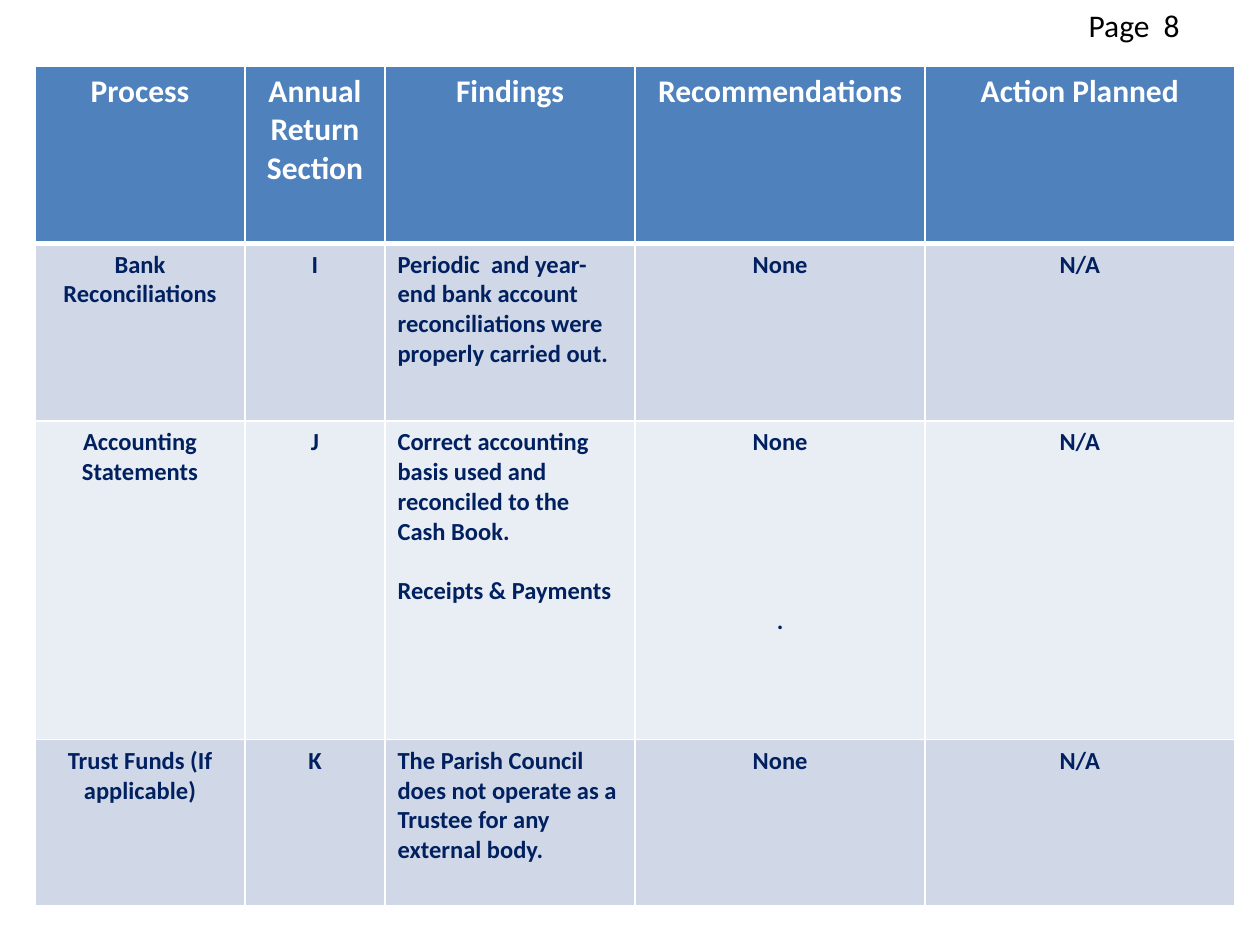
"""Build the audit findings page: a page number above a table of processes."""
from lxml import etree
from pptx import Presentation
from pptx.dml.color import RGBColor
from pptx.enum import text
from pptx.oxml import ns
from pptx.util import Pt

WHITE = RGBColor(0xFF, 0xFF, 0xFF)
BLACK = RGBColor(0x00, 0x00, 0x00)
NAVY = RGBColor(0x00, 0x20, 0x60)
BLUE = RGBColor(0x4F, 0x81, 0xBD)
BAND_DARK = RGBColor(0xD0, 0xD8, 0xE8)
BAND_LIGHT = RGBColor(0xE9, 0xED, 0xF4)

HEADER_FONT = {"name": "Calibri", "size": Pt(18), "bold": True}
BODY_FONT = {"name": "Calibri", "size": Pt(14), "bold": True}
PAGE_FONT = {"name": "Calibri", "size": Pt(18), "bold": False}
LINE_HEIGHT = 17

COLUMN_WIDTHS = [120, 80, 143, 165.7, 176.8]
ROW_HEIGHTS = [101.5, 101.5, 182, 95]
FINDINGS_COLUMN = 2

# Each cell lists (paragraph, blank lines of space above it).
ROWS = [
    [[("Process", 0)], [("Annual Return Section", 0)], [("Findings", 0)],
     [("Recommendations", 0)], [("Action Planned", 0)]],
    [[("Bank Reconciliations", 0)], [("I", 0)],
     [("Periodic  and year- end bank account reconciliations were properly carried out.", 0)],
     [("None", 0)], [("N/A", 0)]],
    [[("Accounting Statements", 0)], [("J", 0)],
     [("Correct accounting basis used and reconciled to the Cash Book.", 0),
      ("Receipts & Payments", 1)],
     [("None", 0), (".", 5)], [("N/A", 0)]],
    [[("Trust Funds (If applicable)", 0)], [("K", 0)],
     [("The Parish Council does not operate as a Trustee for any external body.", 0)],
     [("None", 0)], [("N/A", 0)]],
]


def write_paragraphs(frame, paragraphs, font, color, align):
    """Write paragraphs with space above them into a text frame."""
    for index, (words, blank_lines) in enumerate(paragraphs):
        para = frame.add_paragraph() if index else frame.paragraphs[0]
        para.alignment = align
        if blank_lines:
            para.space_before = Pt(blank_lines * LINE_HEIGHT)
        span = para.add_run()
        span.text = words
        for name, value in font.items():
            setattr(span.font, name, value)
        span.font.color.rgb = color


def set_borders(cell, top, bottom):
    """Give a cell white borders, with widths in points for top and bottom."""
    properties = cell._tc.get_or_add_tcPr()
    widths = {"lnL": 1, "lnR": 1, "lnT": top, "lnB": bottom}
    for index, (side, width) in enumerate(widths.items()):
        line = etree.Element(ns.qn(f"a:{side}"), w=str(int(Pt(width))))
        fill = etree.SubElement(line, ns.qn("a:solidFill"))
        etree.SubElement(fill, ns.qn("a:srgbClr"), val=str(WHITE))
        properties.insert(index, line)


def add_findings_table(page):
    """Add the table of processes, findings and recommendations."""
    table = page.shapes.add_table(
        len(ROWS), len(COLUMN_WIDTHS), Pt(20), Pt(37.7),
        Pt(sum(COLUMN_WIDTHS)), Pt(sum(ROW_HEIGHTS))).table
    for column, width in zip(table.columns, COLUMN_WIDTHS):
        column.width = Pt(width)
    for row, height in zip(table.rows, ROW_HEIGHTS):
        row.height = Pt(height)
    for r, contents in enumerate(ROWS):
        header = r == 0
        band = BLUE if header else (BAND_LIGHT, BAND_DARK)[r % 2]
        font, color = (HEADER_FONT, WHITE) if header else (BODY_FONT, NAVY)
        for c, paragraphs in enumerate(contents):
            cell = table.cell(r, c)
            cell.fill.solid()
            cell.fill.fore_color.rgb = band
            left = c == FINDINGS_COLUMN and not header
            align = text.PP_ALIGN.LEFT if left else text.PP_ALIGN.CENTER
            write_paragraphs(cell.text_frame, paragraphs, font, color, align)
            set_borders(cell, 3 if r == 1 else 1, 3 if header else 1)


def add_page_number(page):
    """Add the page number at the top right."""
    box = page.shapes.add_textbox(Pt(615), Pt(0), Pt(105), Pt(29))
    box.text_frame.word_wrap = True
    write_paragraphs(box.text_frame, [("Page  8", 0)], PAGE_FONT, BLACK,
                     text.PP_ALIGN.LEFT)


def main():
    """Build and save the deck."""
    deck = Presentation()
    deck.slide_width, deck.slide_height = Pt(720), Pt(540)
    page = deck.slides.add_slide(deck.slide_layouts[6])
    add_findings_table(page)
    add_page_number(page)
    deck.save("out.pptx")


if __name__ == "__main__":
    main()
